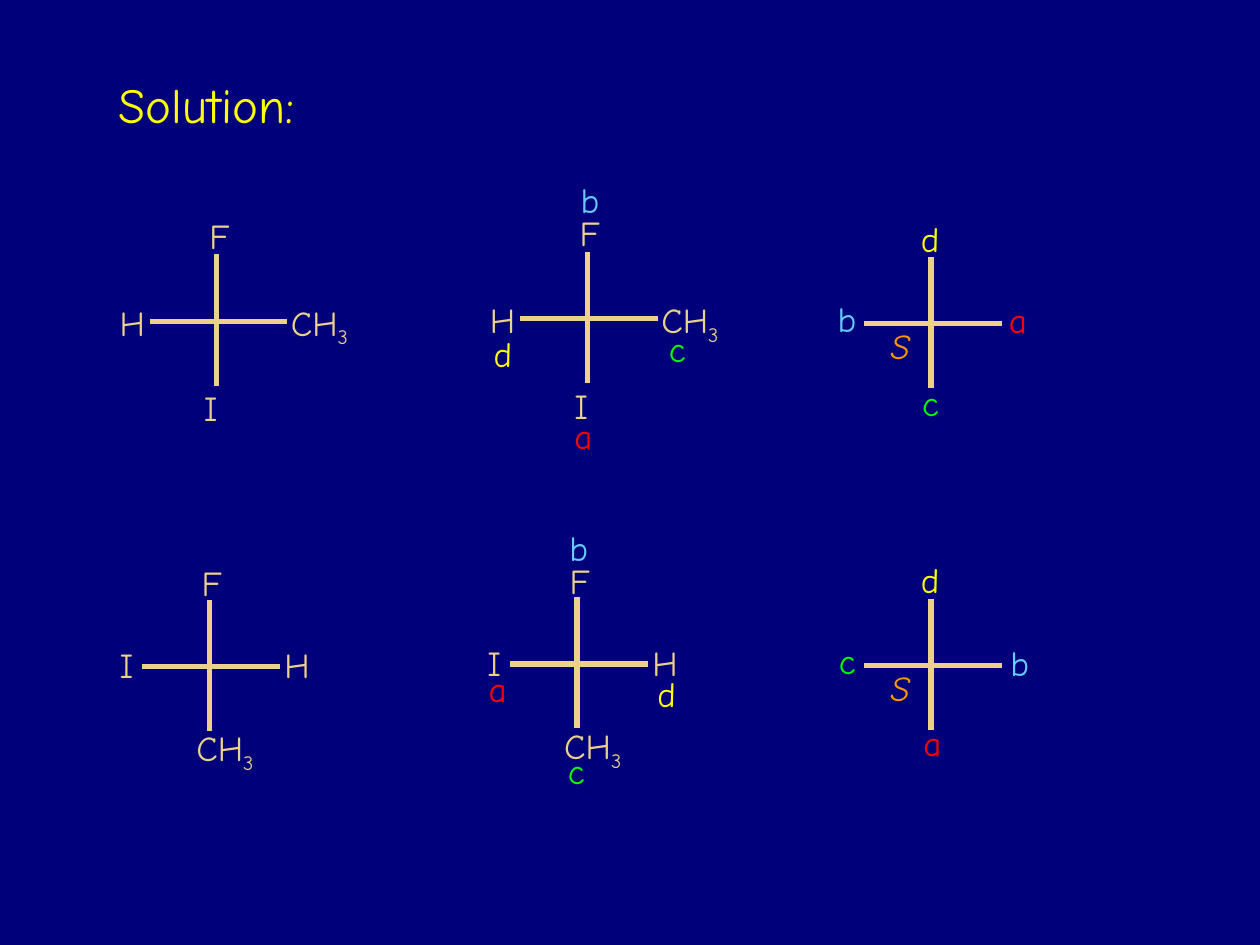
import pptx
import pptx.dml.color
import pptx.enum.shapes
import pptx.enum.text
import pptx.oxml.ns
import pptx.util
from lxml import etree
from pptx.util import Inches

FONT = "Comic Neue"
SAND = "EBD189"
LABEL_COLOURS = {"a": "FF0000", "b": "66CCFF", "c": "00FF00", "d": "FFFF00", "S": "FF9900"}


def rgb(value):
    return pptx.dml.color.RGBColor.from_string(value)


def add_label(text, left, top, width, colour, wrap):
    box = slide.shapes.add_textbox(Inches(left), Inches(top), Inches(width), Inches(0.43))
    frame = box.text_frame
    frame.word_wrap = wrap
    frame.auto_size = pptx.enum.text.MSO_AUTO_SIZE.SHAPE_TO_FIT_TEXT
    paragraph = frame.paragraphs[0]
    paragraph.text = text
    paragraph.font.size = pptx.util.Pt(20)
    paragraph.font.name = FONT
    for run in paragraph.runs:
        run.font.size = pptx.util.Pt(20)
        run.font.name = FONT
        run.font.color.rgb = rgb(colour)
    return paragraph


presentation = pptx.Presentation()
presentation.slide_width = Inches(10)
presentation.slide_height = Inches(7.5)
slide = presentation.slides.add_slide(presentation.slide_layouts[5])
slide.background.fill.solid()
slide.background.fill.fore_color.rgb = rgb("00007A")

heading = slide.shapes.title
heading.left, heading.top = Inches(0.84), Inches(0.54)
heading.width, heading.height = Inches(1.8), Inches(0.57)
heading_frame = heading.text_frame
heading_frame.text = "Solution:"
heading_frame.word_wrap = False
heading_frame.auto_size = pptx.enum.text.MSO_AUTO_SIZE.SHAPE_TO_FIT_TEXT
heading_frame.vertical_anchor = pptx.enum.text.MSO_ANCHOR.TOP
heading_frame.paragraphs[0].alignment = pptx.enum.text.PP_ALIGN.LEFT
heading_font = heading_frame.paragraphs[0].runs[0].font
heading_font.size = pptx.util.Pt(28)
heading_font.name = FONT
heading_font.color.rgb = rgb("FFFF00")

# Atoms around a centre: text, x offset, y offset, width
iodine_below = [("I", -0.2, 0.47, 0.4), ("F", -0.28, -0.9, 0.48),
                ("H", -0.87, -0.21, 0.45), ("CH3", 0.49, -0.21, 0.95)]
methyl_below = [("I", -0.81, -0.23, 0.41), ("F", -0.28, -0.88, 0.48),
                ("H", 0.5, -0.23, 0.43), ("CH3", -0.2, 0.43, 1.07)]

# Fischer projections: centre x, centre y, atoms, priority labels (text, left, top)
projections = [
    (1.72, 2.55, iodine_below, []),
    (1.66, 5.29, methyl_below, []),
    (4.66, 2.53, iodine_below,
     [("d", 3.82, 2.59), ("a", 4.46, 3.24), ("b", 4.51, 1.37), ("c", 5.21, 2.55)]),
    (7.39, 2.57, [],
     [("d", 7.21, 1.68), ("a", 7.91, 2.32), ("b", 6.55, 2.31), ("c", 7.22, 2.98), ("S", 6.97, 2.53)]),
    (4.58, 5.27, methyl_below,
     [("a", 3.78, 5.25), ("b", 4.42, 4.13), ("c", 4.41, 5.9), ("d", 5.12, 5.29)]),
    (7.39, 5.28, [],
     [("d", 7.21, 4.38), ("a", 7.23, 5.68), ("b", 7.92, 5.04), ("c", 6.56, 5.03), ("S", 6.97, 5.24)]),
]

for centre_x, centre_y, atoms, priorities in projections:
    cross = slide.shapes.add_group_shape()
    bonds = [(centre_x - 0.53, centre_y, centre_x + 0.56, centre_y),
             (centre_x, centre_y - 0.53, centre_x, centre_y + 0.51)]
    for ends in bonds:
        bond = cross.shapes.add_connector(
            pptx.enum.shapes.MSO_CONNECTOR.STRAIGHT, *[Inches(end) for end in ends])
        bond.line.color.rgb = rgb(SAND)
        bond.line.width = pptx.util.Pt(3)
        etree.SubElement(bond._element.spPr, pptx.oxml.ns.qn("a:effectLst"))

    for atom, dx, dy, width in atoms:
        symbol = add_label(atom.rstrip("3"), centre_x + dx, centre_y + dy, width, SAND, True)
        if atom == "F":
            symbol.alignment = pptx.enum.text.PP_ALIGN.RIGHT
        if atom == "CH3":
            subscript = symbol.add_run()
            subscript.text = "3"
            subscript.font.size = pptx.util.Pt(20)
            subscript.font.name = FONT
            subscript.font.color.rgb = rgb(SAND)
            subscript._r.get_or_add_rPr().set("baseline", "-25000")

    for priority, left, top in priorities:
        width = {"a": 0.34, "c": 0.34, "S": 0.39}.get(priority, 0.36)
        mark = add_label(priority, left, top, width, LABEL_COLOURS[priority], False)
        if priority == "S":
            mark.runs[0].font.italic = True

presentation.save("out.pptx")
